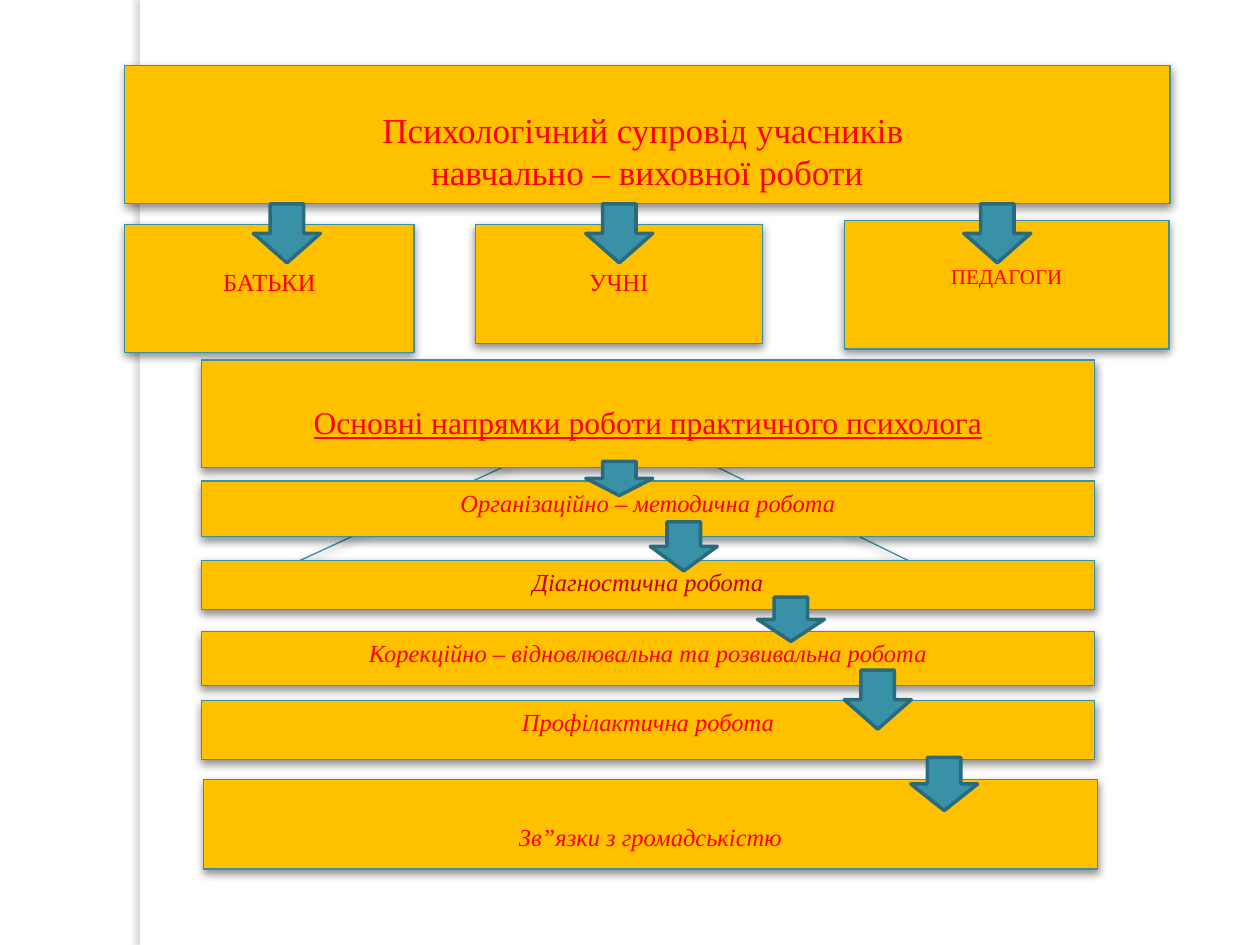
from lxml import etree
from pptx import Presentation
from pptx.dml.color import RGBColor
from pptx.enum import shapes, text
from pptx.oxml.ns import qn
from pptx.util import Cm, Pt

COLORS = {
    "white": "FFFFFF", "box": "FFC000", "teal": "3891A7", "teal_dark": "296B7C",
    "red": "FF0000", "dark_red": "C00000", "black": "000000", "strip_shadow": "736F63",
}
FONT = "Times New Roman"
SLIDE_WIDTH, SLIDE_HEIGHT = 25.4, 19.05
INSET, DEEP_INSET = 0.13, 0.86

TITLE = "Психологічний супровід учасників \nнавчально – виховної роботи"
TITLE_BOX = (2.51, 1.32, 21.08, 2.79)

# text, font size, left, top, width, height
PARTICIPANTS = [
    ("БАТЬКИ", 14, 2.51, 4.52, 5.84, 2.59),
    ("УЧНІ", 14, 9.58, 4.52, 5.79, 2.41),
    ("ПЕДАГОГИ", 12, 17.02, 4.45, 6.55, 2.59),
]

HEADING = "Основні напрямки роботи практичного психолога"
HEADING_TOP, HEADING_HEIGHT = 7.26, 2.16
COLUMN_LEFT, COLUMN_WIDTH = 4.06, 18.01

# text, left, top, height, top inset, colour
DIRECTIONS = [
    ("Організаційно – методична робота", COLUMN_LEFT, 9.7, 1.12, INSET, "red"),
    ("Діагностична робота", COLUMN_LEFT, 11.3, 0.99, INSET, "dark_red"),
    ("Корекційно – відновлювальна та розвивальна робота",
     COLUMN_LEFT, 12.73, 1.09, INSET, "red"),
    ("Профілактична робота", COLUMN_LEFT, 14.12, 1.19, INSET, "red"),
    ("Зв”язки з громадськістю", 4.11, 15.72, 1.8, DEEP_INSET, "red"),
]

RAYS = [(12.22, 8.46, 4.5, 12.01), (12.5, 8.46, 19.25, 11.76)]

ARROW_WIDTH = 1.35
# left, top, height
ARROWS = [
    (5.11, 4.11, 1.19), (11.81, 4.11, 1.19), (19.43, 4.11, 1.19),
    (13.11, 10.52, 0.99), (15.27, 12.04, 0.89), (17.02, 13.51, 1.19),
    (18.36, 15.27, 1.07), (11.81, 9.3, 0.69),
]


def rgb(name):
    return RGBColor.from_string(COLORS[name])


def add_shadow(shape, color="black", opacity=43, blur=5, distance=2, angle=90):
    properties = shape._element.spPr
    for old in properties.findall(qn("a:effectLst")):
        properties.remove(old)
    effects = etree.SubElement(properties, qn("a:effectLst"))
    shadow = etree.SubElement(
        effects, qn("a:outerShdw"), blurRad=str(Pt(blur)), dist=str(Pt(distance)),
        dir=str(angle * 60000), algn="ctr", rotWithShape="0")
    shade = etree.SubElement(shadow, qn("a:srgbClr"), val=COLORS[color])
    etree.SubElement(shade, qn("a:alpha"), val=str(opacity * 1000))


def add_figure(slide, kind, place, fill, line=None, line_width=0.75):
    shape = slide.shapes.add_shape(kind, *(Cm(length) for length in place))
    shape.shadow.inherit = False
    shape.fill.solid()
    shape.fill.fore_color.rgb = rgb(fill)
    if line:
        shape.line.color.rgb = rgb(line)
        shape.line.width = Pt(line_width)
    else:
        shape.line.fill.background()
    return shape


def write(shape, content, size=14, color="red", italic=None, underline=None, inset=INSET):
    frame = shape.text_frame
    frame.word_wrap = True
    frame.vertical_anchor = text.MSO_ANCHOR.TOP
    frame.margin_top = Cm(inset)
    frame.text = content
    for paragraph in frame.paragraphs:
        paragraph.alignment = text.PP_ALIGN.CENTER
        font = paragraph.runs[0].font
        font.name, font.size = FONT, Pt(size)
        font.color.rgb = rgb(color)
        font.italic, font.underline = italic, underline


def add_box(slide, content, place, **text_format):
    shape = add_figure(slide, shapes.MSO_SHAPE.RECTANGLE, place, "box", "teal")
    add_shadow(shape)
    write(shape, content, **text_format)


def add_ray(slide, ends):
    ray = slide.shapes.add_connector(
        shapes.MSO_CONNECTOR.STRAIGHT, *(Cm(length) for length in ends))
    ray.line.color.rgb = rgb("teal")
    ray.line.width = Pt(0.75)
    add_shadow(ray)


def main():
    presentation = Presentation()
    presentation.slide_width = Cm(SLIDE_WIDTH)
    presentation.slide_height = Cm(SLIDE_HEIGHT)
    slide = presentation.slides.add_slide(presentation.slide_layouts[6])

    strip = add_figure(
        slide, shapes.MSO_SHAPE.RECTANGLE, (2.82, 0, 0.2, SLIDE_HEIGHT), "white")
    add_shadow(strip, "strip_shadow", opacity=25, blur=3, distance=3, angle=180)

    add_box(slide, TITLE, TITLE_BOX, size=20, inset=DEEP_INSET)
    for ends in RAYS:
        add_ray(slide, ends)
    for content, size, *place in PARTICIPANTS:
        add_box(slide, content, place, size=size, inset=DEEP_INSET)

    add_box(slide, HEADING, (COLUMN_LEFT, HEADING_TOP, COLUMN_WIDTH, HEADING_HEIGHT),
            size=18, underline=True, inset=DEEP_INSET)
    for content, left, top, height, inset, color in DIRECTIONS:
        add_box(slide, content, (left, top, COLUMN_WIDTH, height),
                color=color, italic=True, inset=inset)

    for left, top, height in ARROWS:
        add_figure(slide, shapes.MSO_SHAPE.DOWN_ARROW, (left, top, ARROW_WIDTH, height),
                   "teal", "teal_dark", line_width=2)

    presentation.save("out.pptx")


if __name__ == "__main__":
    main()
